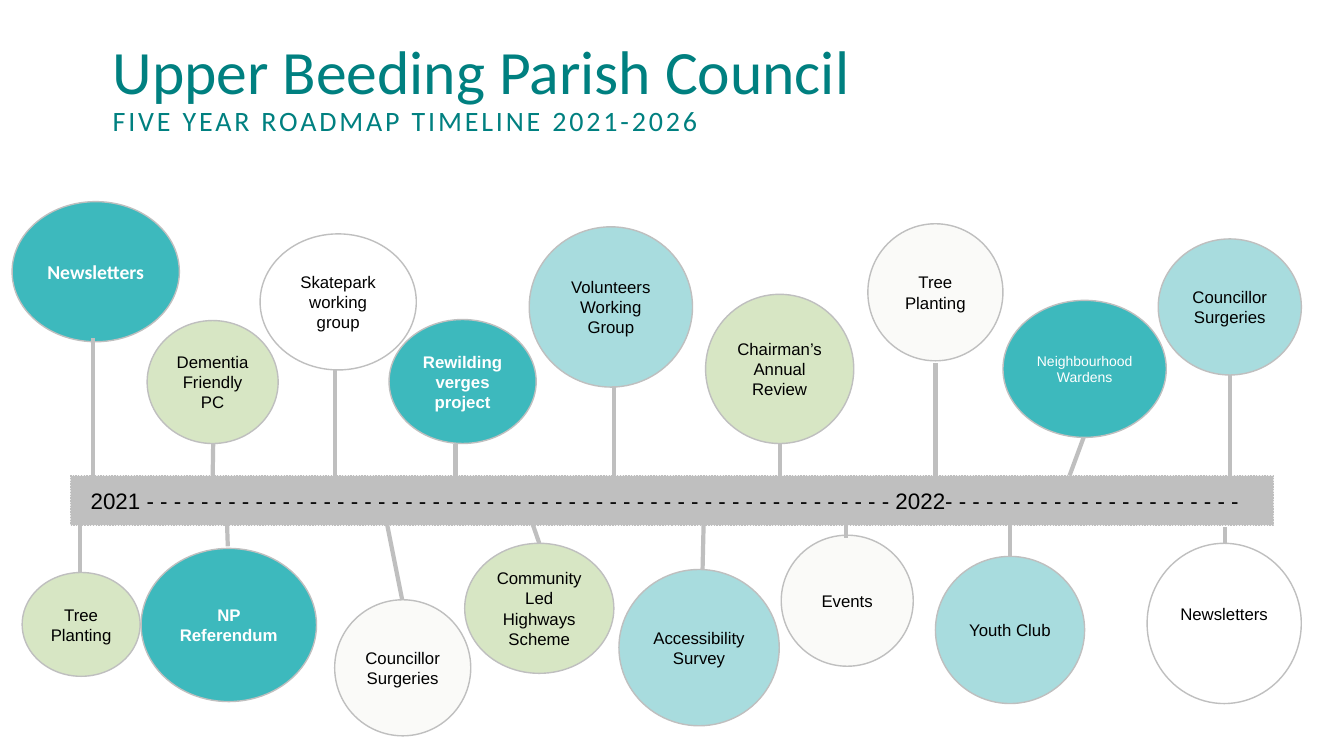
from dataclasses import dataclass

from lxml.etree import SubElement
from pptx import Presentation
from pptx.dml.color import RGBColor
from pptx.enum.dml import MSO_LINE
from pptx.enum.shapes import MSO_CONNECTOR, MSO_SHAPE
from pptx.enum.text import MSO_ANCHOR, PP_ALIGN
from pptx.oxml.ns import qn
from pptx.util import Inches, Pt

COLUMNS, ROWS, CELL = 133.33, 75, 0.1


@dataclass(frozen=True)
class Theme:
    """Colours, fonts and type sizes of the roadmap."""
    heading: str = "008080"
    teal: str = "3DB9BD"
    aqua: str = "A8DCDE"
    green: str = "D7E6C4"
    cream: str = "FAFAF8"
    white: str = "FFFFFF"
    black: str = "000000"
    grey: str = "BFBFBF"
    heading_font: str = "Calibri"
    body_font: str = "Arial"
    title: int = 44
    subtitle: int = 20
    year: int = 16
    lead: int = 14
    label: int = 12
    small: int = 10


@dataclass(frozen=True)
class Milestone:
    """A bubble, its gap to the bar, and the stem that ties them."""
    label: str
    fill: str
    centre: float
    gap: float
    width: float
    height: float
    root: float
    tip: float
    depth: float = 0
    reach: float = 0
    ink: str = "000000"
    size: int = 12
    bold: bool = False
    font: str = "Arial"
    lift: float = 0


T = Theme()
STRONG = {"ink": T.white, "bold": True}
ABOVE = [
    Milestone("Newsletters", T.teal, 9.5, 13.3, 16.6, 13.9, 9.2, 9.2, reach=0.4,
              size=T.lead, font=T.heading_font, **STRONG),
    Milestone("Dementia Friendly PC", T.green, 21.1, 3.2, 13, 12.2, 21.1, 21.15),
    Milestone("Skatepark working group", T.white, 33.55, 10.5, 15.5, 13.5, 33.2, 33.2, 0.3),
    Milestone("Rewilding verges project", T.teal, 45.9, 3.2, 14.6, 12.3, 45.2, 45.2, 0.4, **STRONG),
    Milestone("Volunteers Working Group", T.aqua, 60.6, 8.8, 16.2, 15.9, 60.9, 60.9, 0.3, 0.1),
    Milestone("Chairman’s Annual Review", T.green, 77.35, 3.2, 14.7, 14.8, 77.4, 77.4, 0.3),
    Milestone("Tree Planting", T.cream, 92.8, 11.4, 13.4, 13.6, 92.8, 92.8, reach=-0.2),
    Milestone("Neighbourhood Wardens", T.teal, 107.6, 3.8, 16.2, 13.6, 106.1, 107.5,
              ink=T.white, size=T.small),
    Milestone("Councillor Surgeries", T.aqua, 122, 10, 14.2, 13.5, 122, 122, 0.3),
]
BELOW = [
    Milestone("Tree Planting", T.green, 8.05, 4.7, 11.7, 10.3, 7.9, 7.9, 0.9),
    Milestone("NP Referendum", T.teal, 22.7, 2.3, 17.4, 15.2, 22.5, 22.6, 0.9, -0.2, **STRONG),
    Milestone("Councillor Surgeries", T.cream, 39.95, 7.4, 13.5, 13.5, 38.4, 39.9, 0.1),
    Milestone("Community Led Highways Scheme", T.green, 53.5, 1.8, 14.8, 12.9, 52.6, 53.5, 0.8),
    Milestone("Accessibility Survey", T.aqua, 69.35, 4.4, 15.9, 15.5, 69.8, 69.7),
    Milestone("Events", T.cream, 84.05, 1, 13.1, 13, 83.9, 83.9, 0.9, 0.3),
    Milestone("Youth Club", T.aqua, 100.2, 3.1, 14.8, 14.6, 100.2, 100.2, 1),
    Milestone("Newsletters", T.white, 121.45, 1.8, 15.3, 15.9, 121.5, 121.5, -0.2, lift=2),
]
YEARS = ("2021 " + "- - - - - - - - - - - - - - - - - - - - - - - - - - - - - - - - - - - - - - - - - "
         "- - - - - - - - - - - - - - 2022" + "- - - - - - - - - - - - - - - - - - - - - -")


def cells(*lengths):
    """Turn grid cells into slide lengths."""
    return [Inches(length * CELL) for length in lengths]


def write(paragraph, words, font, size, ink, bold=False):
    """Add one styled run."""
    run = paragraph.add_run()
    run.text = words
    run.font.name, run.font.size, run.font.bold = font, Pt(size), bold
    run.font.color.rgb = RGBColor.from_string(ink)
    return run


def panel(slide, kind, box, fill):
    """Draw a filled shape with a thin grey outline and centred text."""
    shape = slide.shapes.add_shape(kind, *cells(*box))
    shape.shadow.inherit = False
    shape.fill.solid()
    shape.fill.fore_color.rgb = RGBColor.from_string(fill)
    shape.line.color.rgb = RGBColor.from_string(T.grey)
    shape.line.width = Pt(1)
    shape.text_frame.word_wrap = True
    shape.text_frame.vertical_anchor = MSO_ANCHOR.MIDDLE
    shape.text_frame.paragraphs[0].alignment = PP_ALIGN.CENTER
    return shape


def stem(slide, start, end):
    """Draw a thick grey line between two grid points."""
    line = slide.shapes.add_connector(MSO_CONNECTOR.STRAIGHT, *cells(*start, *end))
    line.line.color.rgb = RGBColor.from_string(T.grey)
    line.line.width = Pt(3)
    SubElement(line._element.spPr, qn("a:effectLst"))


def milestone(slide, item, left, edge, side):
    """Place a bubble and its stem off a bar edge; side is -1 above, 1 below."""
    near = edge + side * item.gap
    top = near if side > 0 else near - item.height
    box = (left + item.centre - item.width / 2, top, item.width, item.height)
    frame = panel(slide, MSO_SHAPE.OVAL, box, item.fill).text_frame
    frame.margin_left = frame.margin_right = Inches(0.08)
    frame.margin_bottom = Inches(0.05 + item.lift * CELL)
    write(frame.paragraphs[0], item.label, item.font, item.size, item.ink, item.bold)
    stem(slide, (left + item.root, edge - side * item.depth),
         (left + item.tip, near + side * item.reach))


def heading(slide, box):
    """Write the council name and the roadmap subtitle."""
    frame = slide.shapes.add_textbox(*cells(*box)).text_frame
    frame.word_wrap = True
    frame.vertical_anchor = MSO_ANCHOR.MIDDLE
    lines = frame.paragraphs[0]
    lines.line_spacing = 0.9
    write(lines, "Upper Beeding Parish Council", T.heading_font, T.title, T.heading)
    lines.add_line_break()
    subtitle = write(lines, "FIVE YEAR ROADMAP TIMELINE 2021-2026",
                     T.heading_font, T.subtitle, T.heading)
    subtitle.font._element.set("spc", "200")


def timeline(slide, box):
    """Draw the year bar with milestones above and below it."""
    left, top, width, height = box
    bar_top, bar_height = top + 27.2, 4.9
    bar = panel(slide, MSO_SHAPE.RECTANGLE, (left + 7, bar_top, width - 14, bar_height), T.grey)
    bar.line.dash_style = MSO_LINE.ROUND_DOT
    bar.text_frame.margin_right = Inches(0.22)
    write(bar.text_frame.paragraphs[0], YEARS, T.body_font, T.year, T.black)
    for item in ABOVE:
        milestone(slide, item, left, bar_top, -1)
    for item in BELOW:
        milestone(slide, item, left, bar_top + bar_height, 1)


def main():
    """Build and save the roadmap slide."""
    deck = Presentation()
    deck.slide_width, deck.slide_height = cells(COLUMNS, ROWS)
    slide = deck.slides.add_slide(deck.slide_layouts[6])
    timeline(slide, (0, 20, COLUMNS, 53))
    heading(slide, (10.2, 1.6, 115, 14.5))
    deck.save("out.pptx")


if __name__ == "__main__":
    main()
